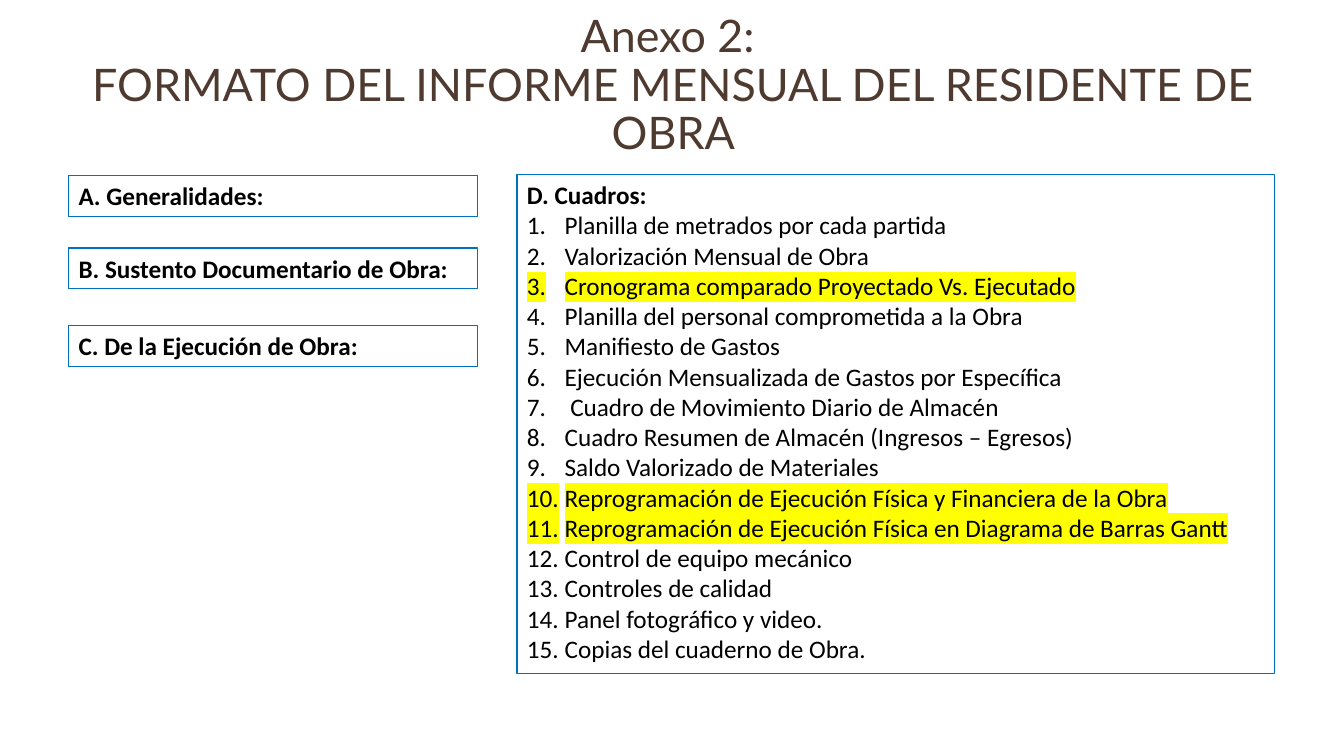
from lxml import etree
from pptx import Presentation
from pptx.dml.color import RGBColor
from pptx.enum.shapes import MSO_SHAPE
from pptx.enum.text import MSO_ANCHOR, MSO_AUTO_SIZE, PP_ALIGN
from pptx.oxml.ns import qn
from pptx.util import Cm, Pt

RECT = MSO_SHAPE.RECTANGLE
TOP, MIDDLE = MSO_ANCHOR.TOP, MSO_ANCHOR.MIDDLE
LEFT, CENTER = PP_ALIGN.LEFT, PP_ALIGN.CENTER
NO_FIT, GROW = MSO_AUTO_SIZE.NONE, MSO_AUTO_SIZE.SHAPE_TO_FIT_TEXT

COLORS = {"title": "4E3A2F", "text": "000000", "line": "0070C0", "mark": "FFFF00"}


def format_run(r, font, size, color, bold=False):
    r.font.name = font
    r.font.size = Pt(size)
    r.font.bold = bold
    r.font.color.rgb = RGBColor.from_string(COLORS[color])


def add_box(left, top, width, height, heading):
    sp = slide.shapes.add_shape(RECT, Cm(left), Cm(top), Cm(width), Cm(height))
    sp.shadow.inherit = False
    sp.fill.background()
    sp.line.color.rgb = RGBColor.from_string(COLORS["line"])
    sp.line.width = Pt(0.75)
    tf = sp.text_frame
    tf.word_wrap = True
    tf.auto_size = GROW
    tf.vertical_anchor = TOP
    p = tf.paragraphs[0]
    p.text = heading
    p.alignment = LEFT
    format_run(p.runs[0], "Calibri", 18, "text", True)
    return tf


prs = Presentation()
prs.slide_width = Cm(33.87)
prs.slide_height = Cm(19.05)
slide = prs.slides.add_slide(prs.slide_layouts[5])

title = slide.shapes.title
title.left, title.top, title.width, title.height = Cm(1.78), Cm(0.13), Cm(30.38), Cm(4.11)
tf = title.text_frame
tf.text = "Anexo 2: \vFORMATO DEL INFORME MENSUAL DEL RESIDENTE DE OBRA"
tf.word_wrap = True
tf.auto_size = NO_FIT
tf.vertical_anchor = MIDDLE
tf.margin_left = tf.margin_right = tf.margin_top = tf.margin_bottom = 0
p = tf.paragraphs[0]
p.alignment = CENTER
p.line_spacing = 0.9
for r in p.runs:
    format_run(r, "Lato", 32, "title")

tables = [
    ("Planilla de metrados por cada partida", False),
    ("Valorización Mensual de Obra", False),
    ("Cronograma comparado Proyectado Vs. Ejecutado", True),
    ("Planilla del personal comprometida a la Obra", False),
    ("Manifiesto de Gastos", False),
    ("Ejecución Mensualizada de Gastos por Específica", False),
    (" Cuadro de Movimiento Diario de Almacén", False),
    ("Cuadro Resumen de Almacén (Ingresos – Egresos)", False),
    ("Saldo Valorizado de Materiales", False),
    ("Reprogramación de Ejecución Física y Financiera de la Obra", True),
    ("Reprogramación de Ejecución Física en Diagrama de Barras Gantt", True),
    ("Control de equipo mecánico", False),
    ("Controles de calidad", False),
    ("Panel fotográfico y video.", False),
    ("Copias del cuaderno de Obra.", False),
]
tf = add_box(13.03, 4.4, 19.08, 12.57, "D. Cuadros:")
for text, marked in tables:
    p = tf.add_paragraph()
    p.text = text
    p.alignment = LEFT
    pPr = p._p.get_or_add_pPr()
    pPr.set("marL", str(Cm(0.95)))
    pPr.set("indent", str(-Cm(0.95)))
    etree.SubElement(pPr, qn("a:buAutoNum"), type="arabicPeriod")
    r = p.runs[0]
    format_run(r, "Calibri", 18, "text")
    if marked:
        highlight = etree.Element(qn("a:highlight"))
        etree.SubElement(highlight, qn("a:srgbClr"), val=COLORS["mark"])
        r._r.rPr.find(qn("a:solidFill")).addnext(highlight)

sections = [
    (4.42, "A. Generalidades:"),
    (6.25, "B. Sustento Documentario de Obra:"),
    (8.2, "C. De la Ejecución de Obra:"),
]
for top, heading in sections:
    add_box(1.73, top, 10.31, 1.03, heading)

prs.save("out.pptx")
